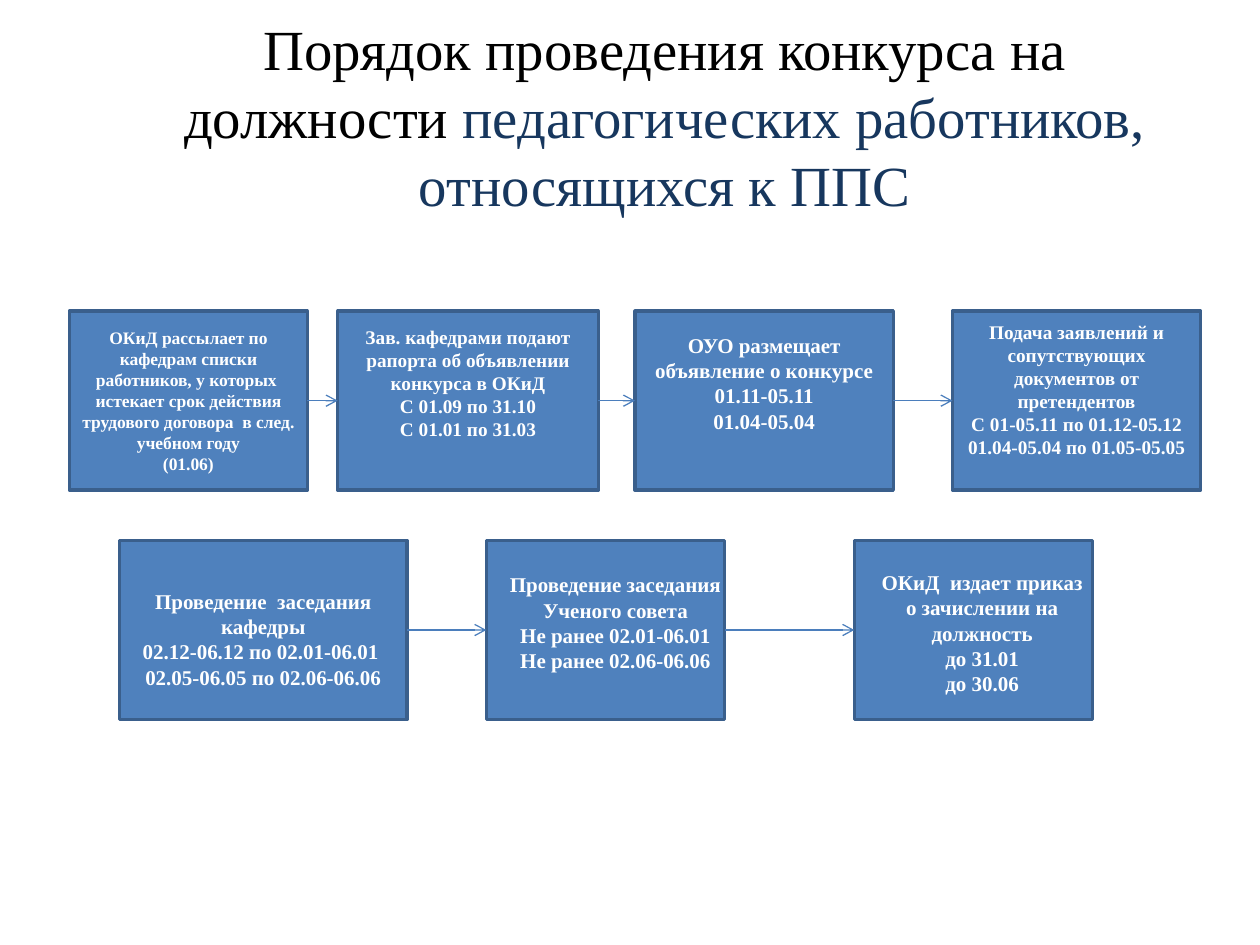
import pptx
import pptx.util
import pptx.dml.color
import pptx.enum.shapes
import pptx.enum.text
import pptx.oxml
from pptx.oxml.ns import nsdecls

FONT = "Times New Roman"
TITLE = [
    ("Порядок проведения конкурса на должности ", "000000"),
    ("педагогических работников, относящихся к ППС", "17375E"),
]
# Each step: left, width, text size, text shift (right, down), paragraphs
ROWS = [
    (2.47, [
        (0.55, 1.89, 10, (0, 0), [
            "ОКиД рассылает по кафедрам списки работников, у которых  истекает "
            "срок действия трудового договора  в след. учебном году",
            "(01.06)"]),
        (2.68, 2.07, 11, (0, -0.14), [
            "Зав. кафедрами подают рапорта об объявлении конкурса в ОКиД",
            "С 01.09 по 31.10", "С 01.01 по 31.03"]),
        (5.04, 2.05, 12, (0, -0.14), [
            "ОУО размещает объявление о конкурсе",
            "01.11-05.11", "01.04-05.04"]),
        (7.56, 1.97, 11, (0, -0.09), [
            "Подача заявлений и сопутствующих документов от претендентов",
            "С 01-05.11 по 01.12-05.12", "01.04-05.04 по 01.05-05.05"]),
    ]),
    (4.29, [
        (0.95, 2.28, 12, (0, 0.07), [
            "Проведение  заседания кафедры",
            "02.12-06.12 по 02.01-06.01 ", "02.05-06.05 по 02.06-06.06"]),
        (3.86, 1.89, 12, (0.08, -0.06), [
            "Проведение заседания Ученого совета",
            "Не ранее 02.01-06.01", "Не ранее 02.06-06.06"]),
        (6.78, 1.89, 12, (0.07, 0.02), [
            "ОКиД  издает приказ о зачислении на должность",
            "до 31.01", "до 30.06"]),
    ]),
]
HEIGHT = 1.42
inch = pptx.util.Inches
CENTER = pptx.enum.text.PP_ALIGN.CENTER
MIDDLE = pptx.enum.text.MSO_ANCHOR.MIDDLE


def paint(target, color):
    target.rgb = pptx.dml.color.RGBColor.from_string(color)


def add_title(slide):
    title = slide.shapes.title
    title.left, title.top = inch(1.3), inch(0.21)
    title.width, title.height = inch(7.95), inch(HEIGHT)
    frame = title.text_frame
    frame.auto_size = pptx.enum.text.MSO_AUTO_SIZE.NONE
    frame.vertical_anchor = MIDDLE
    para = frame.paragraphs[0]
    para.alignment = CENTER
    para.font.name, para.font.size = FONT, pptx.util.Pt(32.4)
    for text, color in TITLE:
        run = para.add_run()
        run.text = text
        paint(run.font.color, color)


def add_step(slide, top, left, width, size, shift, lines):
    box = slide.shapes.add_shape(
        pptx.enum.shapes.MSO_SHAPE.RECTANGLE,
        inch(left), inch(top), inch(width), inch(HEIGHT))
    box.shadow.inherit = False
    box.fill.solid()
    paint(box.fill.fore_color, "4F81BD")
    paint(box.line.color, "3A5F8C")
    box.line.width = pptx.util.Pt(2)

    # Uneven insets move the text off the middle of its box
    right, down = shift
    frame = box.text_frame
    frame.word_wrap = True
    frame.vertical_anchor = MIDDLE
    frame.margin_left, frame.margin_right = inch(0.1 + right), inch(0.1 - right)
    frame.margin_top = inch(0.05 + 2 * max(down, 0))
    frame.margin_bottom = inch(0.05 + 2 * max(-down, 0))
    for i, line in enumerate(lines):
        para = frame.add_paragraph() if i else frame.paragraphs[0]
        para.text = line
        para.alignment = CENTER
        para.font.name, para.font.size = FONT, pptx.util.Pt(size)
        para.font.bold = True
        paint(para.font.color, "FFFFFF")
    return box


def add_arrow(slide, start, end):
    arrow = slide.shapes.add_connector(
        pptx.enum.shapes.MSO_CONNECTOR.STRAIGHT, 0, 0, 0, 0)
    # Rectangle sites: 3 is the right side, 1 the left
    arrow.begin_connect(start, 3)
    arrow.end_connect(end, 1)
    paint(arrow.line.color, "4B7EBC")
    arrow.line.width = pptx.util.Pt(0.75)
    props = arrow.line._get_or_add_ln()
    props.append(pptx.oxml.parse_xml(f'<a:tailEnd {nsdecls("a")} type="arrow"/>'))
    arrow._element.spPr.append(
        pptx.oxml.parse_xml(f'<a:effectLst {nsdecls("a")}/>'))


def main():
    deck = pptx.Presentation()
    deck.slide_width, deck.slide_height = inch(10), inch(7.5)
    slide = deck.slides.add_slide(deck.slide_layouts[0])
    sub = slide.placeholders[1]._element
    sub.getparent().remove(sub)
    add_title(slide)

    # Rows of steps, each joined to the next
    for top, steps in ROWS:
        boxes = [add_step(slide, top, *step) for step in steps]
        for start, end in zip(boxes, boxes[1:]):
            add_arrow(slide, start, end)
    deck.save("out.pptx")


if __name__ == "__main__":
    main()
